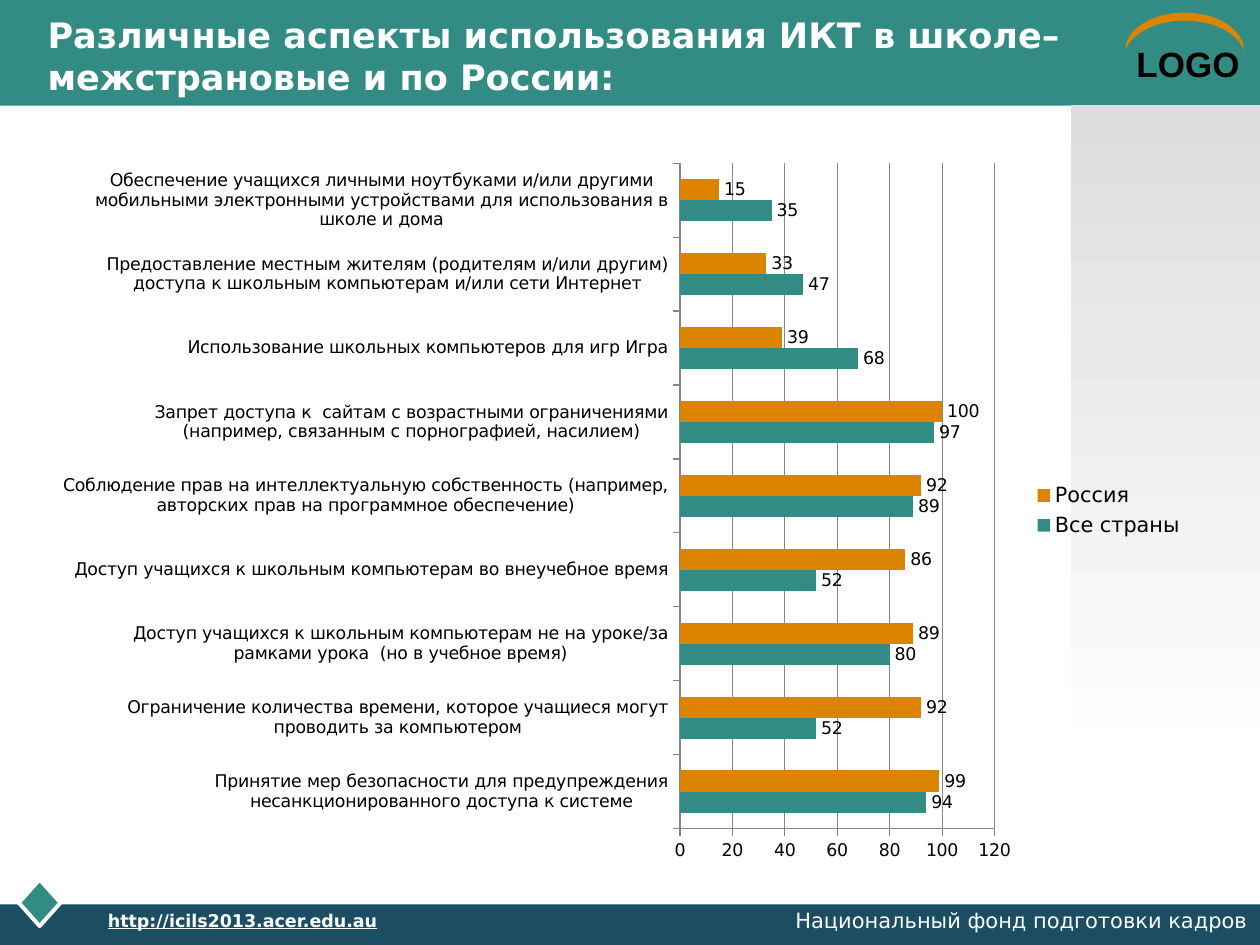
from lxml import etree
from pptx import Presentation
from pptx.chart.data import CategoryChartData
from pptx.dml.color import RGBColor
from pptx.enum import chart as ch, shapes, text
from pptx.oxml import parse_xml
from pptx.oxml.ns import nsdecls
from pptx.util import Cm, Pt

TEAL = RGBColor(0x32, 0x8C, 0x83)
NAVY = RGBColor(0x1B, 0x4E, 0x63)
ORANGE = RGBColor(0xDC, 0x83, 0x00)
WHITE = RGBColor(0xFF, 0xFF, 0xFF)
BLACK = RGBColor(0, 0, 0)
LIGHT_GREY = RGBColor(0xDD, 0xDD, 0xDD)
AXIS_GREY = RGBColor(0x86, 0x86, 0x86)
FONT = "DejaVu Sans"
WIDTH, HEIGHT = 25.4, 19.05

# Category, all countries, Russia; listed from the bottom of the chart up
ROWS = [
    ("Принятие мер безопасности для предупреждения несанкционированного "
     "доступа к системе", 94, 99),
    ("Ограничение количества времени, которое учащиеся могут проводить "
     "за компьютером", 52, 92),
    ("Доступ учащихся к школьным компьютерам не на уроке/за рамками урока  "
     "(но в учебное время)", 80, 89),
    ("Доступ учащихся к школьным компьютерам во внеучебное время", 52, 86),
    ("Соблюдение прав на интеллектуальную собственность (например, "
     "авторских прав на программное обеспечение)", 89, 92),
    ("Запрет доступа к  сайтам с возрастными ограничениями (например, "
     "связанным с порнографией, насилием)", 97, 100),
    ("Использование школьных компьютеров для игр Игра", 68, 39),
    ("Предоставление местным жителям (родителям и/или другим) доступа к "
     "школьным компьютерам и/или сети Интернет", 47, 33),
    ("Обеспечение учащихся личными ноутбуками и/или другими мобильными "
     "электронными устройствами для использования в школе и дома", 35, 15),
]


def set_font(font, size, color=BLACK, name=FONT, bold=False, underline=False):
    font.name = name
    font.size = Pt(size)
    font.bold = bold
    font.underline = underline
    font.color.rgb = color


def add_text(slide, content, box, align=text.PP_ALIGN.LEFT,
             anchor=text.MSO_ANCHOR.TOP, **font):
    """Add a text box; a vertical tab in content breaks the line."""
    tf = slide.shapes.add_textbox(*map(Cm, box)).text_frame
    tf.word_wrap = True
    tf.vertical_anchor = anchor
    p = tf.paragraphs[0]
    p.text = content
    p.alignment = align
    for r in p.runs:
        set_font(r.font, **font)


def add_shape(slide, kind, box, color, outline=None):
    sp = slide.shapes.add_shape(kind, *map(Cm, box))
    sp.shadow.inherit = False
    sp.fill.solid()
    sp.fill.fore_color.rgb = color
    if outline is None:
        sp.line.fill.background()
    else:
        sp.line.color.rgb = outline
        sp.line.width = Pt(2.25)
    return sp


def add_frame(slide):
    """Add the header, footer bar, side gradient and corner ornaments."""
    kind = shapes.MSO_SHAPE
    add_shape(slide, kind.RECTANGLE, (0, 0, WIDTH, 2.13), TEAL)
    add_shape(slide, kind.RECTANGLE, (0, 18.23, WIDTH, 0.82), NAVY)
    add_shape(slide, kind.DIAMOND, (0.38, 17.73, 0.84, 0.94), TEAL, WHITE)
    add_text(slide, "LOGO", (22.66, 0.74, 2.74, 1.12), size=20,
             name="Arial", bold=True)
    arc = add_shape(slide, kind.MOON, (23.5, -0.56, 0.76, 2.39), ORANGE)
    arc.rotation = 90
    arc.adjustments[0] = 0.21

    side = add_shape(slide, kind.RECTANGLE, (21.59, 2.12, 3.81, 13.34), WHITE)
    side.fill.gradient()
    side.fill.gradient_angle = 270
    for stop, color in zip(side.fill.gradient_stops, (LIGHT_GREY, WHITE)):
        stop.color.rgb = color


def place_plot(chart, x, y, w, h):
    """Fix the inner plot area, in fractions of the chart."""
    layout = parse_xml(
        f'<c:layout {nsdecls("c")}><c:manualLayout>'
        '<c:layoutTarget val="inner"/><c:xMode val="edge"/>'
        f'<c:yMode val="edge"/><c:x val="{x}"/><c:y val="{y}"/>'
        f'<c:w val="{w}"/><c:h val="{h}"/></c:manualLayout></c:layout>')
    plot_area = chart.plots[0]._element.getparent()
    for old in plot_area.findall(etree.QName(layout).text):
        plot_area.remove(old)
    plot_area.insert(0, layout)


def add_bar_chart(slide, box):
    names, all_countries, russia = zip(*ROWS)
    data = CategoryChartData()
    data.categories = names
    data.add_series("Все страны", all_countries)
    data.add_series("Россия", russia)
    chart = slide.shapes.add_chart(
        ch.XL_CHART_TYPE.BAR_CLUSTERED, *map(Cm, box), data).chart
    set_font(chart.font, 10)
    chart.has_title = False
    chart.has_legend = True
    chart.legend.position = ch.XL_LEGEND_POSITION.RIGHT
    chart.legend.include_in_layout = False
    set_font(chart.legend.font, 12)

    plot = chart.plots[0]
    plot.gap_width = 150
    plot.overlap = 0
    plot.vary_by_categories = False
    for series, color in zip(plot.series, (TEAL, ORANGE)):
        series.format.fill.solid()
        series.format.fill.fore_color.rgb = color
        labels = series.data_labels
        labels.show_value = True
        labels.position = ch.XL_LABEL_POSITION.OUTSIDE_END
        set_font(labels.font, 10)

    values = chart.value_axis
    values.minimum_scale, values.maximum_scale = 0, 120
    values.major_unit = 20
    values.has_major_gridlines = True
    values.major_gridlines.format.line.color.rgb = AXIS_GREY
    for axis in (chart.category_axis, values):
        axis.major_tick_mark = ch.XL_TICK_MARK.OUTSIDE
        axis.format.line.color.rgb = AXIS_GREY
        set_font(axis.tick_labels.font, 10)
    place_plot(chart, 0.54, 0.02, 0.28, 0.92)


def main():
    prs = Presentation()
    prs.slide_width, prs.slide_height = Cm(WIDTH), Cm(HEIGHT)
    slide = prs.slides.add_slide(prs.slide_layouts[6])
    add_frame(slide)
    add_text(slide, "Различные аспекты использования ИКТ в школе–\v"
             "межстрановые и по России:", (0.71, 0.33, 22.86, 1.57),
             anchor=text.MSO_ANCHOR.MIDDLE, size=20, color=WHITE, bold=True)
    add_bar_chart(slide, (1.27, 3, 22.86, 14.58))
    add_text(slide, "http://icils2013.acer.edu.au", (1.07, 18.23, 6.78, 0.6),
             align=text.PP_ALIGN.RIGHT, size=10, color=WHITE, bold=True,
             underline=True)
    add_text(slide, "Национальный фонд подготовки кадров",
             (15.37, 18.18, 10.03, 0.66), align=text.PP_ALIGN.RIGHT,
             size=12, color=WHITE)
    prs.save("out.pptx")


if __name__ == "__main__":
    main()
